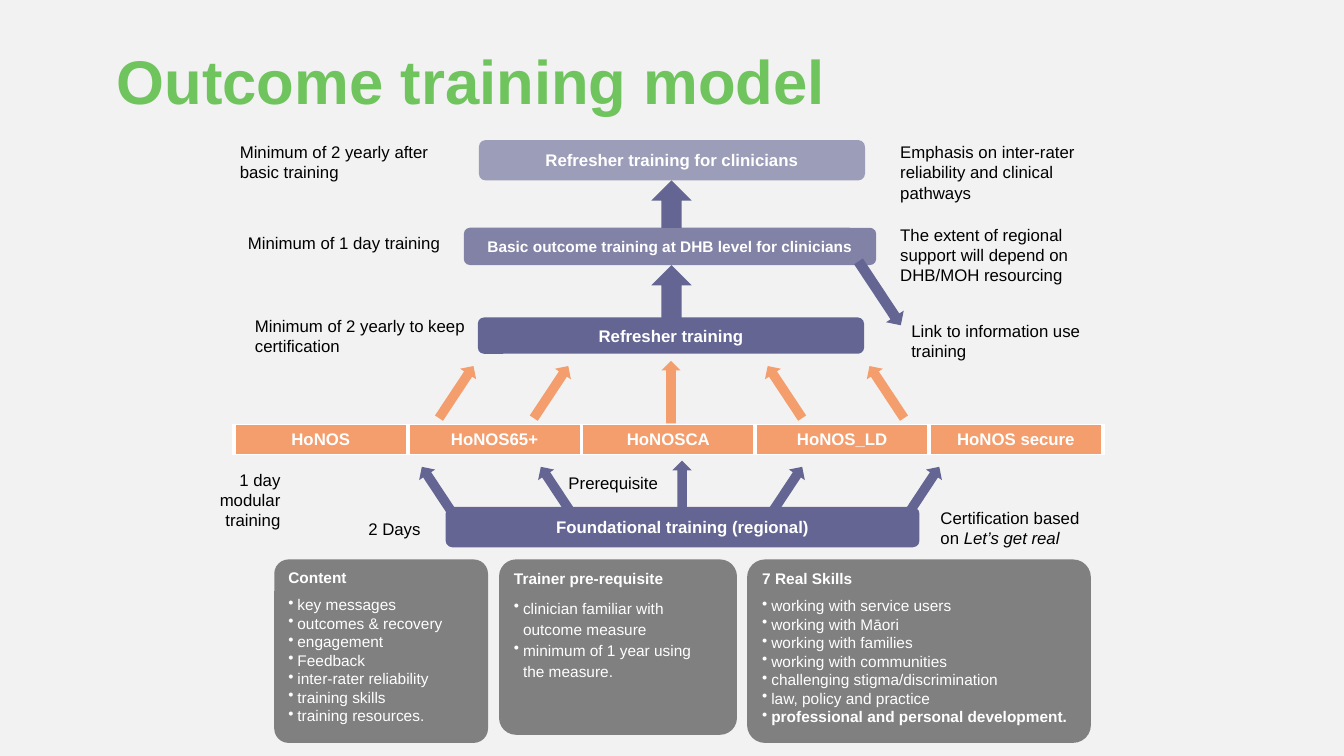
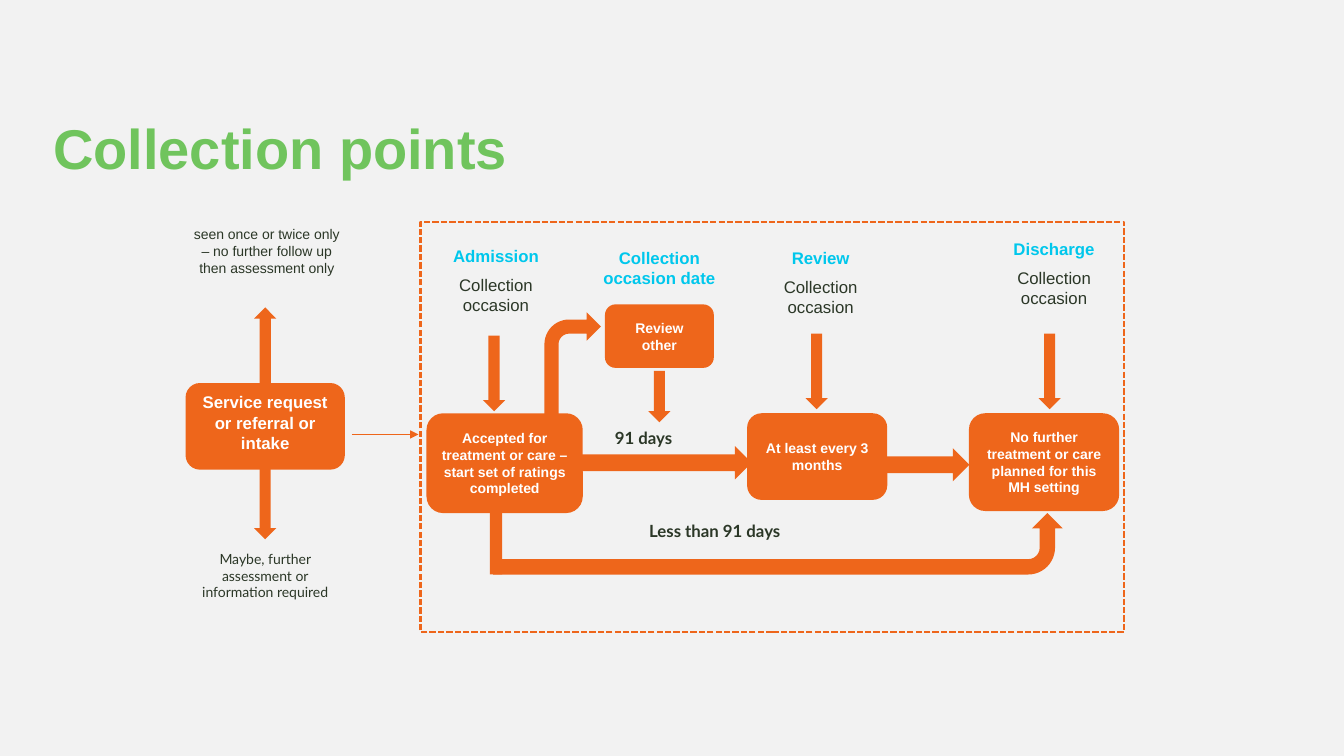
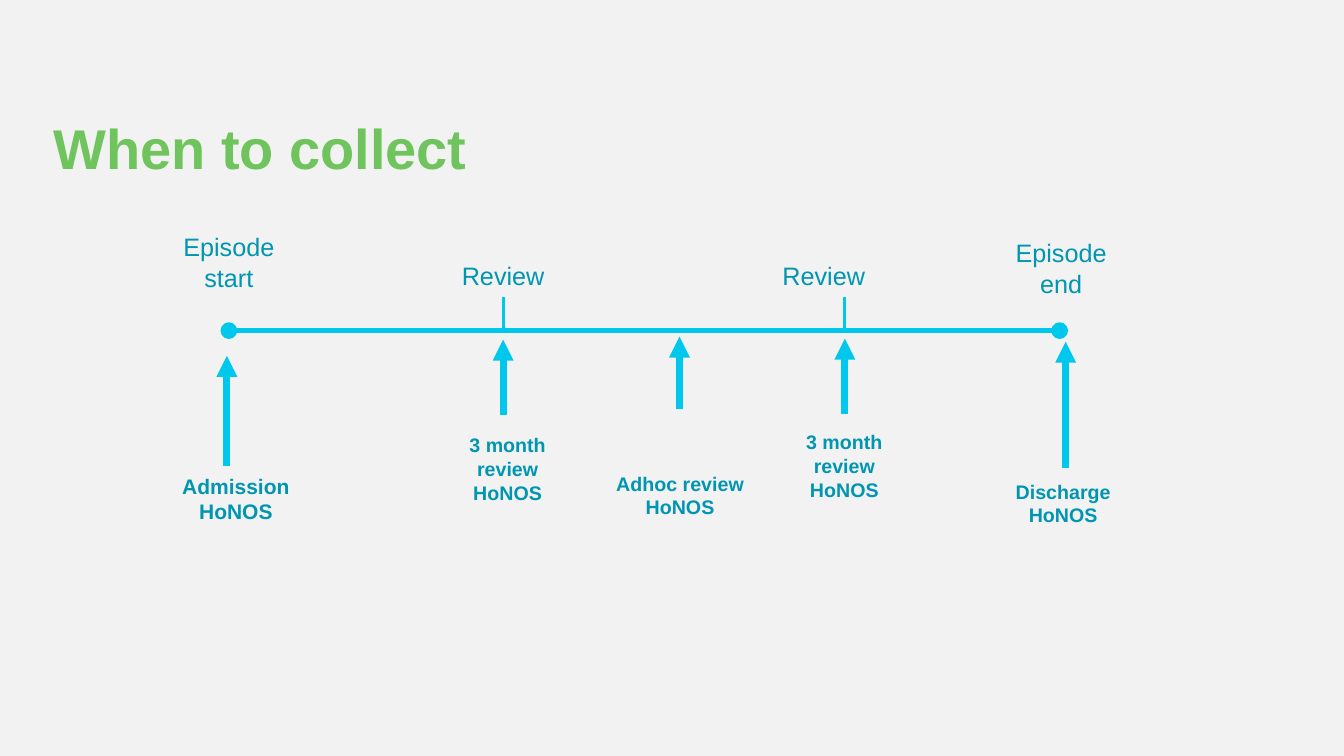
from lxml.etree import SubElement as Sub
from pptx import Presentation
from pptx.dml.color import RGBColor as RGB
from pptx.enum.dml import MSO_LINE as DASH
from pptx.enum.shapes import MSO_CONNECTOR as WIRE, MSO_SHAPE as KIND
from pptx.enum.text import MSO_ANCHOR as ANCHOR, PP_ALIGN as ALIGN
from pptx.oxml.ns import qn
from pptx.util import Inches, Pt

# Theme: colours, and text looks as (colour, font values)
THEME = {
    "ink": {
        "page": "F2F2F2", "green": "70C45D", "purple": "646593", "peach": "F49D6D",
        "grey": "808080", "orange": "EE661B", "cyan": "00C7EC", "teal": "0095B1",
        "dark": "2B3727", "black": "000000", "white": "FFFFFF",
    },
    "look": {
        "title": ("green", dict(name="Arial", size=Pt(44), bold=True)),
        "subtitle": ("green", dict(name="Arial", size=Pt(40), bold=True)),
        "note": ("black", dict(name="Arial", size=Pt(12))),
        "slant": ("black", dict(name="Arial", size=Pt(12), italic=True)),
        "label": ("white", dict(name="Arial", size=Pt(12), bold=True)),
        "head": ("white", dict(name="Arial", size=Pt(11), bold=True)),
        "item": ("white", dict(name="Arial", size=Pt(11), bold=False)),
        "step": ("white", dict(name="Arial", size=Pt(10), bold=True)),
        "point": ("cyan", dict(name="Arial", size=Pt(12), bold=True)),
        "plain": ("dark", dict(name="Arial", size=Pt(12))),
        "days": ("dark", dict(name="Lato", size=Pt(12), bold=True)),
        "small": ("dark", dict(name="Arial", size=Pt(10))),
        "lato": ("dark", dict(name="Lato", size=Pt(10))),
        "phase": ("teal", dict(name="Arial", size=Pt(18))),
        "start": ("teal", dict(name="Arial", size=Pt(15), bold=True)),
        "event": ("teal", dict(name="Arial", size=Pt(14), bold=True)),
    },
}
INK = {name: RGB.from_string(code) for name, code in THEME["ink"].items()}


def put(slide, kind, box, *parts, fill=None, align=ALIGN.CENTER, anchor=None, turn=0):
    """Add a shape, or a text box if kind is None; a part is look, words, look, words..."""
    place = [Inches(n) for n in box]
    if kind is None:
        shape = slide.shapes.add_textbox(*place)
    else:
        shape = slide.shapes.add_shape(kind, *place)
        shape.shadow.inherit = False
        shape.line.fill.background()
        shape.rotation = turn
        if fill:
            shape.fill.solid()
            shape.fill.fore_color.rgb = INK[fill]
        else:
            shape.fill.background()
    frame = shape.text_frame
    frame.word_wrap = True
    frame.vertical_anchor = anchor or (ANCHOR.MIDDLE if kind else ANCHOR.TOP)
    for i, part in enumerate(parts):
        para = frame.add_paragraph() if i else frame.paragraphs[0]
        para.alignment = align
        for look, words in zip(part[::2], part[1::2]):
            run = para.add_run()
            run.text = words
            ink, font = THEME["look"][look]
            run.font.color.rgb = INK[ink]
            for name, value in font.items():
                setattr(run.font, name, value)
    return shape


def wire(slide, start, end, ink, width, **ends):
    """Add a straight line; ends may hold headEnd and tailEnd."""
    line = slide.shapes.add_connector(WIRE.STRAIGHT, *[Inches(n) for n in (*start, *end)])
    line.line.color.rgb = INK[ink]
    line.line.width = Pt(width)
    Sub(line.element.spPr, qn("a:effectLst"))
    for tag, mark in ends.items():
        Sub(line.line._get_or_add_ln(), qn("a:" + tag), type=mark)


# Deck and titles
deck = Presentation()
deck.slide_width, deck.slide_height = Inches(13.33), Inches(7.5)
back = deck.slide_master.background.fill
back.solid()
back.fore_color.rgb = INK["page"]
slides = []
for look, box, words in [
    ("title", (1.06, 0.05, 9, 1.17), "Outcome training model"),
    ("subtitle", (0.43, 0.4, 11.5, 1.45), "Collection points"),
    ("subtitle", (0.43, 0.4, 11.5, 1.45), "When to collect"),
]:
    slide = deck.slides.add_slide(deck.slide_layouts[6])
    title = put(slide, None, box, (look, words), align=ALIGN.LEFT, anchor=ANCHOR.BOTTOM)
    title.text_frame.paragraphs[0].line_spacing = 0.9
    slides.append(slide)
model, flow, dates = slides

# Slide 1: arrows between the levels
LEFT, UP, RIGHT = 146.5, 180, 213.5
for box, turn, ink in [
    ((8.62, 2.53, 0.21, 0.76), LEFT + 180, "purple"),
    ((6.46, 1.79, 0.4, 0.47), UP, "purple"),
    ((6.46, 2.63, 0.4, 0.56), UP, "purple"),
    ((6.67, 4.57, 0.19, 0.46), UP, "purple"),
    *[((x, 3.58, 0.19, 0.62), turn, "peach") for x, turn in
      [(4.43, RIGHT), (5.37, RIGHT), (6.56, UP), (7.69, LEFT), (8.7, LEFT)]],
    *[((x, 4.58, 0.19, 0.62), turn, "purple") for x, turn in
      [(4.26, LEFT), (5.44, LEFT), (7.69, RIGHT), (9.05, RIGHT)]],
]:
    put(model, KIND.DOWN_ARROW, box, fill=ink, turn=turn)

# Training levels, fading towards the top
for box, look, alpha, words in [
    ((4.75, 1.39, 3.83, 0.4), "label", 60, "Refresher training for clinicians"),
    ((4.6, 2.26, 4.09, 0.37), "head", 79, "Basic outcome training at DHB level for clinicians"),
    ((4.74, 3.15, 3.83, 0.36), "label", 100, "Refresher training"),
    ((4.42, 5.03, 4.7, 0.4), "label", 100, "Foundational training (regional)"),
]:
    level = put(model, KIND.ROUNDED_RECTANGLE, box, (look, words), fill="purple")
    if alpha < 100:
        tone = level.element.spPr.find(".//" + qn("a:srgbClr"))
        Sub(tone, qn("a:alpha"), val=str(alpha * 1000))

# Side notes
for box, align, *part in [
    ((2.28, 1.36, 2.31, 0.51), ALIGN.LEFT, "note", "Minimum of 2 yearly after basic training"),
    ((2.36, 2.26, 2.31, 0.3), ALIGN.LEFT, "note", "Minimum of 1 day training"),
    ((2.43, 3.08, 2.31, 0.5), ALIGN.LEFT, "note", "Minimum of 2 yearly to keep certification"),
    ((8.83, 1.36, 2.31, 0.71), ALIGN.LEFT, "note",
     "Emphasis on inter-rater reliability and clinical pathways"),
    ((8.83, 2.18, 2.31, 0.71), ALIGN.LEFT, "note",
     "The extent of regional support will depend on DHB/MOH resourcing"),
    ((8.94, 3.13, 1.95, 0.51), ALIGN.LEFT, "note", "Link to information use training"),
    ((5.54, 4.64, 1.23, 0.3), ALIGN.LEFT, "note", "Prerequisite"),
    ((1.97, 4.61, 0.91, 0.71), ALIGN.RIGHT, "note", "1 day modular training"),
    ((3.26, 5.1, 1.01, 0.3), ALIGN.RIGHT, "note", "2 Days"),
    ((9.23, 4.99, 1.77, 0.5), ALIGN.LEFT, "note", "Certification based on ", "slant", "Let’s get real"),
]:
    put(model, None, box, part, align=align)

# Cards with bullets
for box, curve, inset, space, head, items in [
    ((2.72, 5.55, 2.12, 1.82), 0.078, 0.1, 1, "Content",
     ["key messages", "outcomes & recovery", "engagement", "Feedback",
      "inter-rater reliability", "training skills", "training resources."]),
    ((4.95, 5.55, 2.36, 1.74), 0.097, 0.3, 1.14, "Trainer pre-requisite",
     ["clinician familiar with outcome measure", "minimum of 1 year using the measure."]),
    ((7.41, 5.55, 3.41, 1.82), 0.097, 0.1, 1, "7 Real Skills",
     ["working with service users", "working with Māori", "working with families",
      "working with communities", "challenging stigma/discrimination",
      "law, policy and practice", "professional and personal development."]),
]:
    card = put(model, KIND.ROUNDED_RECTANGLE, box, ("head", head),
               *[("head" if item.startswith("professional") else "item", item) for item in items],
               fill="grey", align=ALIGN.LEFT, anchor=ANCHOR.TOP)
    card.adjustments[0] = curve
    card.text_frame.margin_right = Inches(inset)
    first, *rest = card.text_frame.paragraphs
    first.space_after = Pt(6)
    for para in rest:
        para.line_spacing = space
        props = para._p.get_or_add_pPr()
        props.set("marL", str(Inches(0.09)))
        props.set("indent", str(-Inches(0.09)))
        Sub(props, qn("a:buChar"), char="•")

# Table of measures
names = ["HoNOS", "HoNOS65+", "HoNOSCA", "HoNOS_LD", "HoNOS secure"]
table = model.shapes.add_table(
    1, len(names), Inches(2.32), Inches(4.21), Inches(8.62), Inches(0.3)).table
table.first_row = table.horz_banding = False
ink, font = THEME["look"]["label"]
for i, name in enumerate(names):
    table.columns[i].width = Inches(8.62 / len(names))
    cell = table.cell(0, i)
    cell.fill.solid()
    cell.fill.fore_color.rgb = INK["peach"]
    cell.vertical_anchor = ANCHOR.MIDDLE
    cell.margin_left = cell.margin_right = Inches(0.14)
    para = cell.text_frame.paragraphs[0]
    para.alignment = ALIGN.CENTER
    run = para.add_run()
    run.text = name
    run.font.color.rgb = INK[ink]
    for key, value in font.items():
        setattr(run.font, key, value)
    props = cell._tc.get_or_add_tcPr()
    for spot, tag in enumerate(["a:lnL", "a:lnR"]):
        edge = Sub(props, qn(tag), w=str(Pt(3)))
        Sub(Sub(edge, qn("a:solidFill")), qn("a:srgbClr"), val=THEME["ink"]["white"])
        props.insert(spot, edge)

# Slide 2: dashed frame and entry line
frame = put(flow, KIND.RECTANGLE, (4.17, 2.2, 6.98, 4.07))
frame.line.color.rgb = INK["orange"]
frame.line.width = Pt(1.5)
frame.line.dash_style = DASH.SQUARE_DOT
wire(flow, (3.49, 4.31), (4.15, 4.31), "orange", 0.5, tailEnd="triangle")

# Arrows along the flow
for box, turn in [
    ((4.79, 3.33, 0.22, 0.75), 0),
    ((7.99, 3.31, 0.22, 0.75), 0),
    ((10.3, 3.31, 0.22, 0.75), 0),
    ((6.43, 3.68, 0.22, 0.51), 0),
    ((2.52, 4.6, 0.22, 0.75), 0),
    ((2.52, 3.05, 0.22, 0.75), 180),
    ((6.41, 3.71, 0.33, 1.76), 270),
    ((9.04, 4.2, 0.33, 0.82), 270),
]:
    put(flow, KIND.DOWN_ARROW, box, fill="orange", turn=turn)
put(flow, KIND.BENT_ARROW, (5.4, 3.1, 0.56, 1.01), fill="orange")
bend = put(flow, KIND.BENT_ARROW, (7.41, 2.57, 0.61, 5.65), fill="orange", turn=270)
bend.element.spPr.xfrm.set("flipV", "1")
put(flow, KIND.RECTANGLE, (4.86, 5.07, 0.12, 0.63), fill="orange")

# Steps
for box, anchor, *parts in [
    ((1.84, 3.8, 1.58, 0.86), ANCHOR.TOP, ("label", "Service request or referral or intake")),
    ((4.23, 4.1, 1.55, 0.99), ANCHOR.MIDDLE,
     ("step", "Accepted for treatment or care – start set of ratings completed")),
    ((6, 3.02, 1.08, 0.63), ANCHOR.MIDDLE, ("step", "Review"), ("step", "other")),
    ((7.41, 4.1, 1.39, 0.86), ANCHOR.MIDDLE, ("step", "At least every 3 months")),
    ((9.61, 4.1, 1.49, 0.97), ANCHOR.MIDDLE,
     ("step", "No further treatment or care planned for this MH setting")),
]:
    put(flow, KIND.ROUNDED_RECTANGLE, box, *parts, fill="orange", anchor=anchor)

# Collection occasions
for box, name in [
    ((4.35, 2.39, 1.14, 1.09), "Admission"),
    ((7.57, 2.41, 1.14, 0.86), "Review"),
    ((9.81, 2.32, 1.29, 0.94), "Discharge"),
]:
    point = put(flow, None, box, ("point", name), ("plain", "Collection occasion"))
    point.text_frame.paragraphs[1].space_before = Pt(6)

# Remarks
for box, align, *part in [
    ((5.75, 2.41, 1.58, 0.46), ALIGN.CENTER, "point", "Collection occasion date"),
    ((6, 4.19, 1.06, 0.46), ALIGN.LEFT, "days", "91 days"),
    ((6.34, 5.12, 3.6, 0.34), ALIGN.LEFT, "days", "Less than 91 days"),
    ((1.79, 2.19, 1.71, 0.9), ALIGN.CENTER, "small",
     "seen once or twice only – no further follow up then assessment only"),
    ((1.83, 5.41, 1.6, 1.24), ALIGN.CENTER, "lato",
     "Maybe, further assessment or information required"),
]:
    put(flow, None, box, part, align=align)

# Slide 3: time line, review ticks and arrows
wire(dates, (2.27, 3.28), (10.51, 3.28), "cyan", 4, headEnd="oval", tailEnd="oval")
for x in (4.99, 8.38):
    wire(dates, (x, 3.27), (x, 2.95), "cyan", 2.25)
for x, low, top in [(2.25, 4.62, 3.53), (4.99, 4.12, 3.37), (6.74, 4.06, 3.34),
                    (8.38, 4.11, 3.36), (10.57, 4.64, 3.39)]:
    wire(dates, (x, low), (x, top), "cyan", 5, tailEnd="triangle")

# Phases above and events below the line
for box, *part in [
    ((1.52, 2.25, 1.5, 0.7), "phase", "Episode start"),
    ((4.45, 2.53, 1.08, 0.38), "phase", "Review"),
    ((7.63, 2.53, 1.08, 0.38), "phase", "Review"),
    ((9.86, 2.31, 1.33, 0.7), "phase", "Episode end"),
    ((1.66, 4.65, 1.36, 0.61), "start", "Admission HoNOS"),
    ((4.43, 4.25, 1.21, 0.81), "event", "3 month review HoNOS"),
    ((5.92, 4.63, 1.65, 0.57), "event", "Adhoc review HoNOS"),
    ((7.81, 4.22, 1.13, 0.81), "event", "3 month review HoNOS"),
    ((9.92, 4.71, 1.25, 0.57), "event", "Discharge HoNOS"),
]:
    put(dates, None, box, part)

deck.save("out.pptx")
